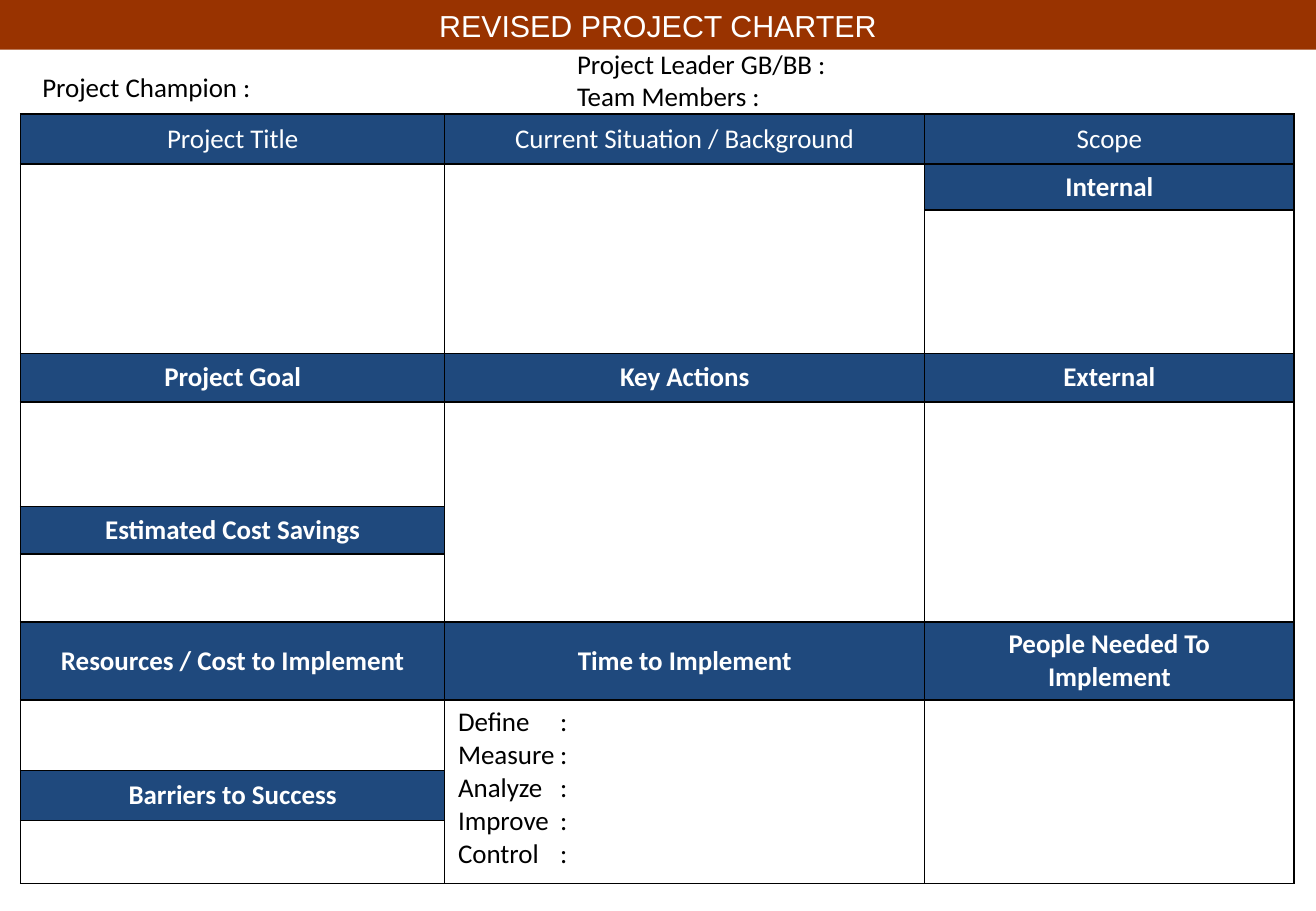
from lxml.etree import SubElement
from pptx import Presentation
from pptx.dml.color import RGBColor
from pptx.enum.text import MSO_ANCHOR, PP_ALIGN
from pptx.oxml import parse_xml
from pptx.oxml.ns import nsdecls, qn
from pptx.util import Inches, Pt

RUST = RGBColor(0x99, 0x33, 0x00)
NAVY = RGBColor(0x1F, 0x49, 0x7D)
WHITE = RGBColor(0xFF, 0xFF, 0xFF)
BLACK = RGBColor(0, 0, 0)

# Content
TITLE = "REVISED PROJECT CHARTER"
NOTES = [  # lines, left, top, width, height
    (["Project Champion :"], 0.25, 0.53, 1.94, 0.37),
    (["Project Leader GB/BB :", "Team Members :"], 4.65, 0.34, 2.28, 0.64),
]
COLS = [3.49, 3.95, 3.04]
ROWS = [0.41, 0.38, 1.18, 0.4, 0.86, 0.39, 0.56, 0.63, 0.58, 0.41, 0.52]
HEADS = {  # (row, column): lines
    (0, 0): ["Project Title"],
    (0, 1): ["Current Situation / Background"],
    (0, 2): ["Scope"],
    (1, 2): ["Internal"],
    (3, 0): ["Project Goal"],
    (3, 1): ["Key Actions"],
    (3, 2): ["External"],
    (5, 0): ["Estimated Cost Savings"],
    (7, 0): ["Resources / Cost to Implement"],
    (7, 1): ["Time to Implement"],
    (7, 2): ["People Needed To", "Implement"],
    (9, 0): ["Barriers to Success"],
}
STEPS = ["Define", "Measure", "Analyze", "Improve", "Control"]
SPANS = [(1, 0, 2), (1, 1, 2), (4, 1, 6), (4, 2, 6), (8, 1, 10), (8, 2, 10)]


def write(frame, lines, size=16, font="Calibri", color=BLACK, bold=False,
          align=PP_ALIGN.LEFT, tab=None):
    for i, line in enumerate(lines):
        para = frame.paragraphs[0] if i == 0 else frame.add_paragraph()
        para.alignment = align
        run = para.add_run()
        run.text = line
        run.font.size, run.font.name = Pt(size), font
        run.font.bold, run.font.color.rgb = bold, color
        if tab:
            stops = SubElement(para._p.get_or_add_pPr(), qn("a:tabLst"))
            SubElement(stops, qn("a:tab"), pos=str(Inches(tab)), algn="l")


def edge(cell):
    props = cell._tc.get_or_add_tcPr()
    for i, side in enumerate("LRTB"):
        props.insert(i, parse_xml(
            f'<a:ln{side} {nsdecls("a")} w="{Pt(1)}"><a:solidFill>'
            f'<a:srgbClr val="{BLACK}"/></a:solidFill></a:ln{side}>'))


deck = Presentation()
deck.slide_width, deck.slide_height = Inches(10.83), Inches(7.5)
slide = deck.slides.add_slide(deck.slide_layouts[5])

# Title bar
bar = slide.shapes.title
bar.left, bar.top, bar.width, bar.height = 0, 0, deck.slide_width, Inches(0.41)
bar.fill.solid()
bar.fill.fore_color.rgb = RUST
frame = bar.text_frame
frame.margin_left = frame.margin_right = 0
frame.vertical_anchor = MSO_ANCHOR.MIDDLE
write(frame, [TITLE], size=18, font="Arial", color=WHITE, align=PP_ALIGN.CENTER)

# Charter table
grid = slide.shapes.add_table(
    len(ROWS), len(COLS), Inches(0.17), Inches(0.94),
    Inches(sum(COLS)), Inches(sum(ROWS))).table
grid.first_row = grid.horz_banding = False
for col, width in zip(grid.columns, COLS):
    col.width = Inches(width)
for row, height in zip(grid.rows, ROWS):
    row.height = Inches(height)
for top, col, end in SPANS:
    grid.cell(top, col).merge(grid.cell(end, col))

for r in range(len(ROWS)):
    for c in range(len(COLS)):
        cell = grid.cell(r, c)
        cell.margin_left = cell.margin_right = Inches(0.11)
        cell.fill.background()
        if (r, c) in HEADS:
            cell.fill.solid()
            cell.fill.fore_color.rgb = NAVY
            cell.vertical_anchor = MSO_ANCHOR.MIDDLE
            write(cell.text_frame, HEADS[r, c], color=WHITE, bold=r > 0,
                  align=PP_ALIGN.CENTER)
        edge(cell)
write(grid.cell(8, 1).text_frame, [f"{step}\t:" for step in STEPS], tab=0.84)

# People above the table
for lines, *place in NOTES:
    box = slide.shapes.add_textbox(*map(Inches, place))
    box.text_frame.word_wrap = False
    write(box.text_frame, lines)

deck.save("out.pptx")
